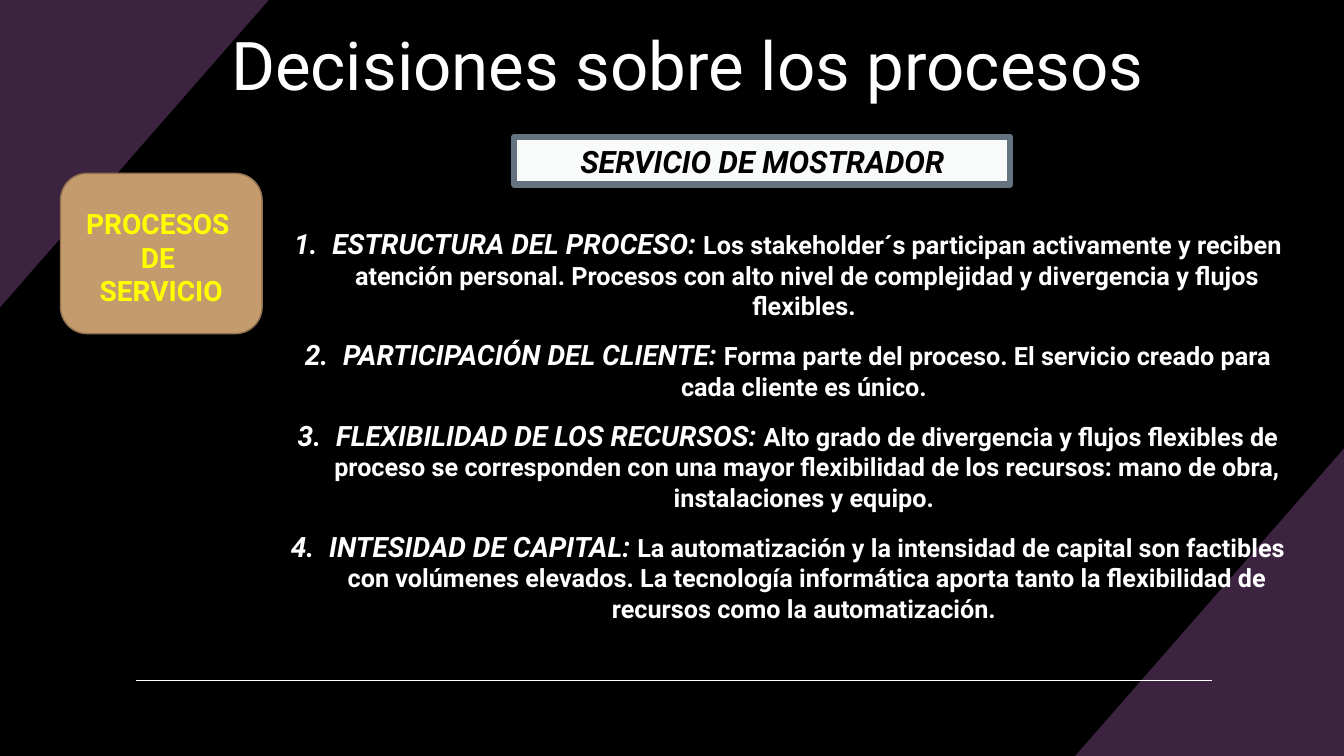
from lxml.etree import SubElement
from pptx import Presentation
from pptx.dml.color import RGBColor
from pptx.enum.shapes import MSO_CONNECTOR, MSO_SHAPE
from pptx.enum.text import MSO_ANCHOR, PP_ALIGN
from pptx.oxml.ns import qn
from pptx.util import Inches, Pt

INK = {
    "back": "000000", "corner": "3C2441", "text": "FFFFFF",
    "badge": "C49B6D", "edge": "917351", "label": "FFFF00",
    "banner": "F9FAFA", "frame": "657380", "dark": "000000",
}
POINTS = [
    ("ESTRUCTURA DEL PROCESO: ",
     "Los stakeholder´s participan activamente y reciben atención personal. "
     "Procesos con alto nivel de complejidad y divergencia y flujos flexibles. "),
    ("PARTICIPACIÓN DEL CLIENTE: ",
     "Forma parte del proceso. El servicio creado para cada cliente es único. "),
    ("FLEXIBILIDAD DE LOS RECURSOS: ",
     "Alto grado de divergencia y flujos flexibles de proceso se corresponden con "
     "una mayor flexibilidad de los recursos: mano de obra, instalaciones y equipo. "),
    ("INTESIDAD DE CAPITAL: ",
     "La automatización y la intensidad de capital son factibles con volúmenes "
     "elevados. La tecnología informática aporta tanto la flexibilidad de recursos "
     "como la automatización. "),
]


def color(name):
    return RGBColor.from_string(INK[name])


class Board:
    """Draws on one slide; every length is a percentage of its width or height."""
    font = "Roboto"

    def __init__(self, deck):
        self.wide, self.high = deck.slide_width, deck.slide_height
        self.slide = deck.slides.add_slide(deck.slide_layouts[6])
        self.shapes = self.slide.shapes
        fill = self.slide.background.fill
        fill.solid()
        fill.fore_color.rgb = color("back")

    def spot(self, x, y):
        return round(self.wide * x / 100), round(self.high * y / 100)

    def area(self, x, y, w, h):
        return *self.spot(x, y), *self.spot(w, h)

    def paint(self, shape, fill, edge=None, width=1):
        shape.shadow.inherit = False
        shape.fill.solid()
        shape.fill.fore_color.rgb = color(fill)
        if edge:
            shape.line.color.rgb = color(edge)
            shape.line.width = Pt(width)
        else:
            shape.line.fill.background()

    def style(self, run, size, ink, bold=True, slant=False):
        font = run.font
        font.name, font.size = self.font, Pt(size)
        font.bold, font.italic = bold, slant
        font.color.rgb = color(ink)

    def label(self, shape, words, size, ink, anchor=MSO_ANCHOR.TOP, **look):
        frame = shape.text_frame
        frame.word_wrap = True
        frame.vertical_anchor = anchor
        frame.text = words
        for para in frame.paragraphs:
            para.alignment = PP_ALIGN.CENTER
            for run in para.runs:
                self.style(run, size, ink, **look)

    def corner(self, *points):
        first, *rest = [self.spot(*point) for point in points]
        pen = self.shapes.build_freeform(*first, scale=1)
        pen.add_line_segments(rest, close=True)
        self.paint(pen.convert_to_shape(), "corner")

    def rule(self, x, y, end):
        line = self.shapes.add_connector(
            MSO_CONNECTOR.STRAIGHT, *self.spot(x, y), *self.spot(end, y))
        line.line.color.rgb = color("text")
        line.line.width = Pt(1)
        SubElement(line._element.spPr, qn("a:effectLst"))

    def box(self, kind, area, *paint):
        shape = self.shapes.add_shape(kind, *self.area(*area))
        self.paint(shape, *paint)
        return shape

    def text(self, area, words, size, ink, **look):
        self.label(self.shapes.add_textbox(*self.area(*area)), words, size, ink, **look)

    def points(self, area, items):
        """Numbered, centred paragraphs, each with a slanted heading."""
        frame = self.shapes.add_textbox(*self.area(*area)).text_frame
        frame.word_wrap = True
        for index, (head, body) in enumerate(items):
            para = frame.add_paragraph() if index else frame.paragraphs[0]
            para.text = head
            para.alignment = PP_ALIGN.CENTER
            para.space_after = Pt(12)
            self.style(para.runs[0], 20, "text", slant=True)
            tail = para.add_run()
            tail.text = body
            self.style(tail, 18, "text")
            props = para._p.get_or_add_pPr()
            props.set("marL", str(Inches(0.38)))
            props.set("indent", str(-Inches(0.38)))
            SubElement(props, qn("a:buFont"), typeface="+mj-lt")
            SubElement(props, qn("a:buAutoNum"), type="arabicPeriod")


def main():
    deck = Presentation()
    deck.slide_width, deck.slide_height = Inches(13.33), Inches(7.5)
    board = Board(deck)
    board.corner((100, 59.33), (100, 100), (80, 100))
    board.corner((0, 40.67), (0, 0), (20, 0))
    board.rule(10.13, 90, 90.17)
    board.text((16.2, 0.53, 69.92, 13.87), "Decisiones sobre los procesos",
               48, "text", bold=False, anchor=MSO_ANCHOR.BOTTOM)
    board.box(MSO_SHAPE.ROUNDED_RECTANGLE, (4.5, 22.93, 15, 21.2), "badge", "edge")
    board.text((4.5, 26.67, 15, 14.8), "PROCESOS \nDE \nSERVICIO", 20, "label")
    banner = board.box(MSO_SHAPE.RECTANGLE, (38.26, 18.13, 36.91, 6.27),
                       "banner", "frame", 4.5)
    board.label(banner, "SERVICIO DE MOSTRADOR", 22, "dark",
                anchor=MSO_ANCHOR.MIDDLE, slant=True)
    board.points((20.86, 29.33, 75.54, 54.27), POINTS)
    deck.save("out.pptx")


if __name__ == "__main__":
    main()
